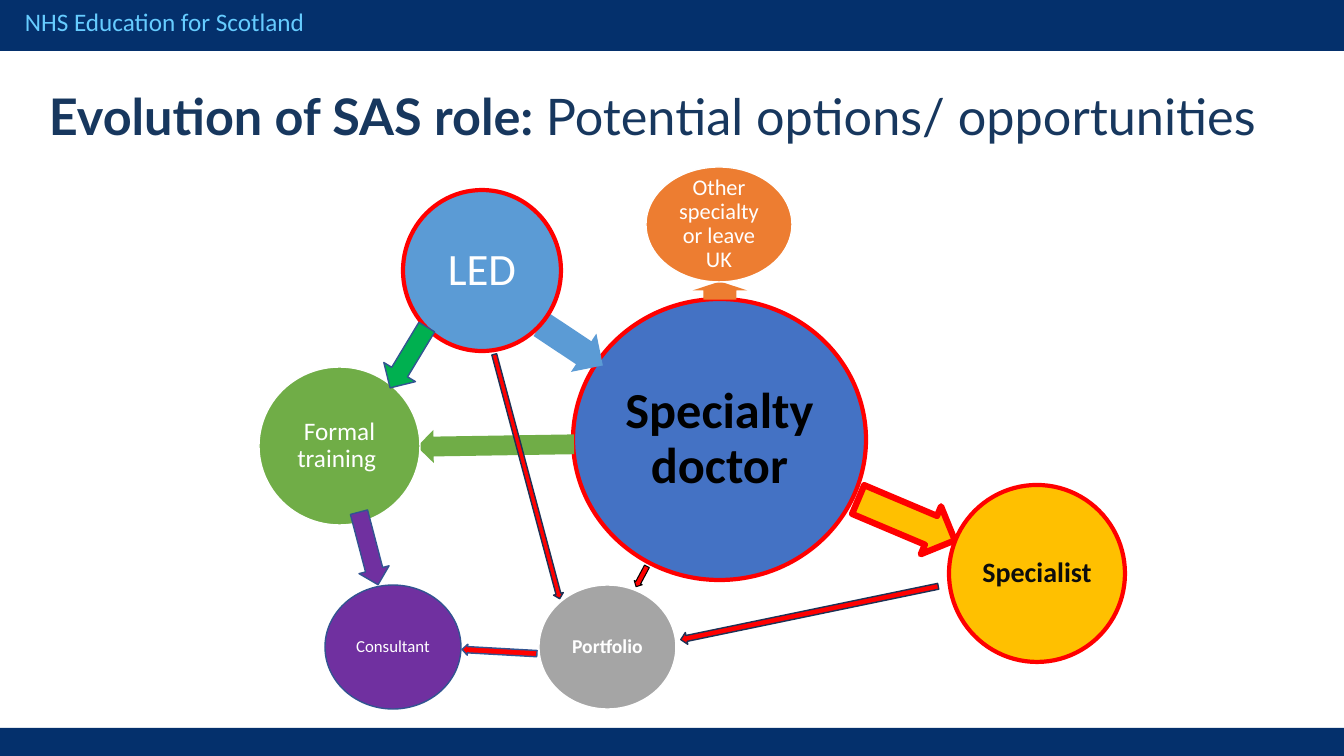
import pptx
import pptx.util
import pptx.dml.color
import pptx.enum.shapes
import pptx.enum.text

KIND = pptx.enum.shapes.MSO_SHAPE
ALIGN = pptx.enum.text.PP_ALIGN
ANCHOR = pptx.enum.text.MSO_ANCHOR

NAVY, RED, WHITE, BLACK = "04306C", "FF0000", "FFFFFF", "000000"
BLUE, SKY, GREEN, ORANGE = "4472C4", "5B9BD5", "70AD47", "ED7D31"
GOLD, PURPLE, GREY, LEAF = "FFC000", "7030A0", "A5A5A5", "00B050"
EDGE, DARK = "325491", "1E3256"


def px(n):
    return round(n * 914400 / 100.8)


def color(code):
    return pptx.dml.color.RGBColor.from_string(code)


class Board:
    face = "Calibri"
    head = "Lato"

    def __init__(self, deck):
        self.slide = deck.slides.add_slide(deck.slide_layouts[6])

    def shape(self, kind, box, fill, line=None, width=1):
        item = self.slide.shapes.add_shape(kind, *map(px, box))
        item.shadow.inherit = False
        item.fill.solid()
        item.fill.fore_color.rgb = color(fill)
        if line:
            item.line.color.rgb = color(line)
            item.line.width = pptx.util.Pt(width)
        else:
            item.line.fill.background()
        return item

    def style(self, run, face, size, ink, bold=False):
        run.font.name = face
        run.font.size = pptx.util.Pt(size)
        run.font.color.rgb = color(ink)
        run.font.bold = bold

    def bar(self, top, high):
        self.shape(KIND.RECTANGLE, (0, top, 1344, high), NAVY)

    def text(self, box, parts, face, size, ink, space=1):
        frame = self.slide.shapes.add_textbox(*map(px, box)).text_frame
        frame.word_wrap = True
        para = frame.paragraphs[0]
        para.line_spacing = space
        for words, bold in parts:
            run = para.add_run()
            run.text = words
            self.style(run, face, size, ink, bold)

    def disc(self, box, words, size, fill, line, width=1, ink=WHITE, bold=False, pad=2):
        item = self.shape(KIND.OVAL, box, fill, line, width)
        frame = item.text_frame
        frame.word_wrap = True
        frame.vertical_anchor = ANCHOR.MIDDLE
        frame.margin_left = frame.margin_right = px(pad)
        frame.margin_top = frame.margin_bottom = px(pad)
        frame.text = words
        para = frame.paragraphs[0]
        para.alignment = ALIGN.CENTER
        para.line_spacing = 0.9
        self.style(para.runs[0], self.face, size, ink, bold)

    def arrow(self, box, turn, fill, line=None, width=1, kind=KIND.RIGHT_ARROW, shaft=0.5):
        item = self.shape(kind, box, fill, line, width)
        item.rotation = turn
        item.adjustments[0] = shaft


def main():
    deck = pptx.Presentation()
    deck.slide_width, deck.slide_height = px(1344), px(756)
    board = Board(deck)

    board.bar(0, 51)
    board.bar(728, 28)
    board.text((15, 1, 571, 40), [("NHS Education for Scotland", False)], board.face, 18, "66CCFF")

    board.disc((573, 299, 293, 281), "Specialty doctor", 36, BLUE, RED, 3, BLACK, True, 5)
    board.arrow((711, 263, 18, 55), 270, ORANGE, shaft=0.6)
    board.disc((646, 167, 146, 115), "Other specialty or leave UK", 16, ORANGE, WHITE)
    board.arrow((630, 572, 23, 9), 118.1, RED, BLACK, 0.75, shaft=0.6)
    board.disc((539, 585, 137, 124), "Portfolio", 14, GREY, WHITE, bold=True)
    board.arrow((854, 494, 105, 52), 22.9, GOLD, RED, 4.5, shaft=0.6)
    board.disc((949, 485, 176, 177), "Specialist", 20, GOLD, RED, 3, "0D0D0D", True, 3)
    board.arrow((535, 322, 74, 46), 33.6, SKY, shaft=0.6)
    board.disc((403, 190, 158, 161), "LED", 32, SKY, RED, 3, pad=4)
    board.arrow((417, 429, 157, 33), 179.1, GREEN, shaft=0.6)
    board.disc((259, 367, 161, 158), "Formal training ", 18, GREEN, WHITE, pad=3)
    board.arrow((373, 339, 71, 37), 301.1, LEAF, EDGE, kind=KIND.LEFT_ARROW)

    title = [("Evolution of SAS role: ", True), ("Potential options/ opportunities", False)]
    board.text((39, 87, 1240, 170), title, board.head, 36, "17375E", 0.9)

    board.disc((325, 585, 136, 124), "Consultant", 12, PURPLE, EDGE)
    board.arrow((462, 646, 75, 11), 183.2, RED, EDGE, shaft=0.57)
    board.arrow((331, 533, 75, 31), 75.3, PURPLE, EDGE, shaft=0.57)
    board.arrow((678, 607, 263, 12), 348.3, RED, DARK, kind=KIND.LEFT_ARROW)
    board.arrow((522, 350, 10, 253), 345, RED, DARK, kind=KIND.DOWN_ARROW)

    deck.save("out.pptx")


if __name__ == "__main__":
    main()
